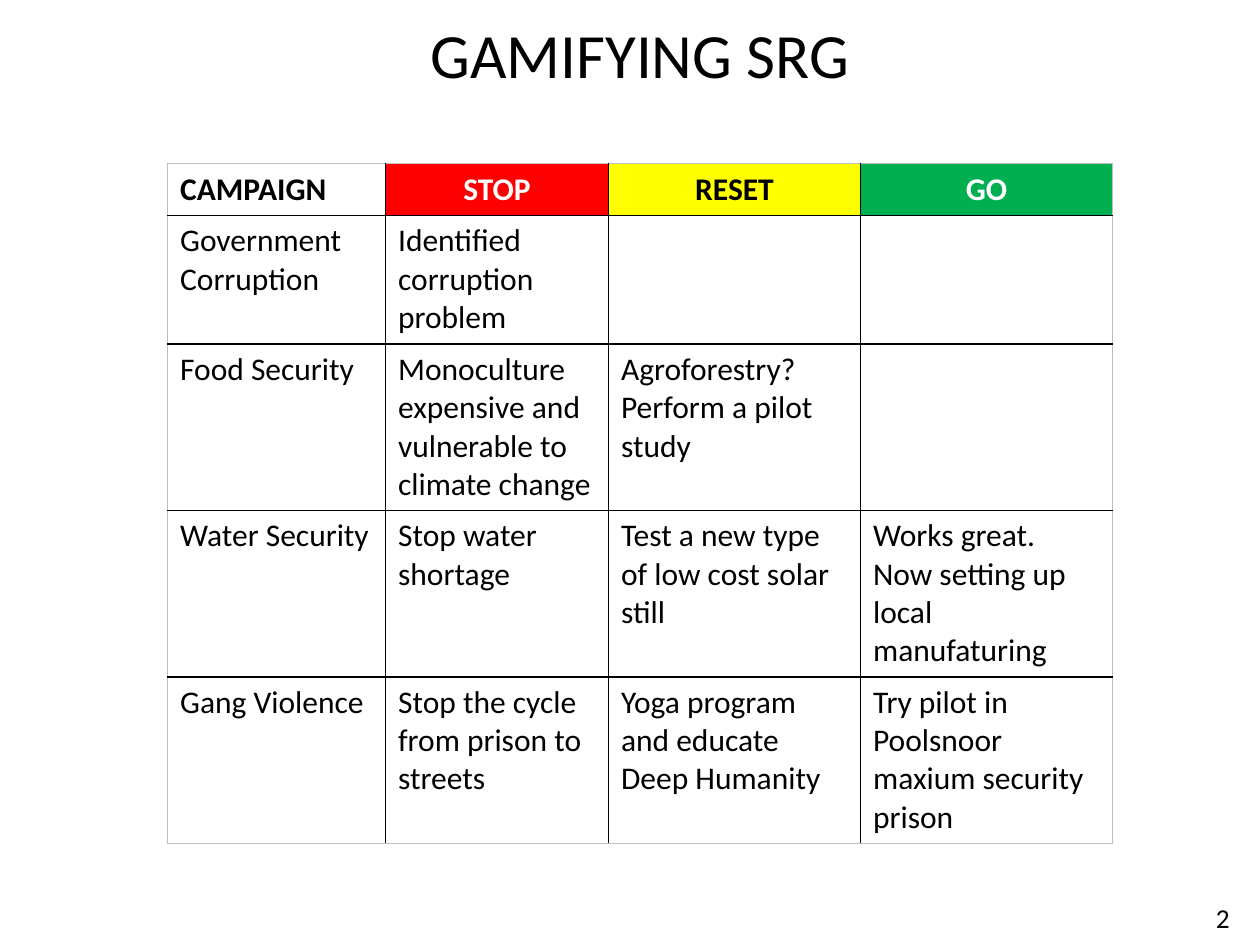
from pptx import Presentation
from pptx.dml.color import RGBColor
from pptx.enum.text import MSO_ANCHOR as Anchor, PP_ALIGN as Align
from pptx.oxml.ns import qn
from pptx.util import Inches, Pt
from lxml.etree import SubElement

FONT = "Calibri"
COLORS = {
    "ink": "000000",
    "white": "FFFFFF",
    "frame": "BFBFBF",
    "stop": "FF0000",
    "reset": "FFFF00",
    "go": "00B050",
}

# Heading, fill and text colour of each column
HEADINGS = [
    ("CAMPAIGN", None, "ink"),
    ("STOP", "stop", "white"),
    ("RESET", "reset", "ink"),
    ("GO", "go", "white"),
]
CAMPAIGNS = [
    ("Government Corruption", "Identified corruption problem", "", ""),
    ("Food Security", "Monoculture expensive and vulnerable to climate change",
     "Agroforestry? Perform a pilot study", ""),
    ("Water Security", "Stop water shortage", "Test a new type of low cost solar still",
     "Works great. Now setting up local manufaturing"),
    ("Gang Violence", "Stop the cycle from prison to streets",
     "Yoga program and educate Deep Humanity",
     "Try pilot in Poolsnoor maxium security prison"),
]
COLUMN_WIDTHS = [1.73, 1.77, 2, 2]
ROW_HEIGHTS = [0.41, 1.02, 1.32, 1.32, 1.32]


def rgb(name):
    return RGBColor.from_string(COLORS[name])


def style(paragraph, size, color="ink", bold=False, align=Align.LEFT):
    paragraph.alignment = align
    font = paragraph.font
    font.name, font.size, font.bold = FONT, Pt(size), bold
    font.color.rgb = rgb(color)


def add_label(slide, text, box, size):
    """One centred line of text in the given box."""
    label = slide.shapes.add_textbox(*map(Inches, box)).text_frame
    label.word_wrap = True
    label.vertical_anchor = Anchor.MIDDLE
    label.text = text
    style(label.paragraphs[0], size, align=Align.CENTER)


def set_borders(cell, outer_sides):
    """Black rules inside the table, a thin grey frame around it."""
    properties = cell._tc.get_or_add_tcPr()
    for side, is_outer in outer_sides.items():
        color, width = ("frame", 0.75) if is_outer else ("ink", 1)
        line = SubElement(properties, qn(f"a:{side}"), w=str(Pt(width)))
        fill = SubElement(line, qn("a:solidFill"))
        SubElement(fill, qn("a:srgbClr"), val=COLORS[color])


def add_campaign_table(slide, box):
    rows = [[heading for heading, _, _ in HEADINGS], *CAMPAIGNS]
    frame = slide.shapes.add_table(len(rows), len(HEADINGS), *map(Inches, box))
    table = frame.table
    table.first_row = table.horz_banding = False
    for column, width in zip(table.columns, COLUMN_WIDTHS):
        column.width = Inches(width)
    for row, height in zip(table.rows, ROW_HEIGHTS):
        row.height = Inches(height)

    last_row, last_column = len(rows) - 1, len(HEADINGS) - 1
    for r, texts in enumerate(rows):
        for c, text in enumerate(texts):
            cell = table.cell(r, c)
            cell.text = text
            set_borders(cell, {"lnL": c == 0, "lnR": c == last_column,
                               "lnT": r == 0, "lnB": r == last_row})
            _, fill, color = HEADINGS[c]
            is_heading = r == 0
            if is_heading and fill:
                cell.fill.solid()
                cell.fill.fore_color.rgb = rgb(fill)
            else:
                cell.fill.background()
            style(cell.text_frame.paragraphs[0], 18,
                  color if is_heading else "ink", is_heading,
                  Align.CENTER if is_heading and c > 0 else Align.LEFT)


def main():
    deck = Presentation()
    deck.slide_width, deck.slide_height = Inches(10), Inches(7.5)
    slide = deck.slides.add_slide(deck.slide_layouts[6])

    # Campaign table
    add_campaign_table(slide, (1.33, 1.3, sum(COLUMN_WIDTHS), sum(ROW_HEIGHTS)))
    # Title
    add_label(slide, "GAMIFYING SRG", (0.83, 0, 8.5, 0.84), 36)
    # Page number
    add_label(slide, "2", (9.41, 7.06, 0.59, 0.44), 15.6)

    deck.save("out.pptx")


if __name__ == "__main__":
    main()
